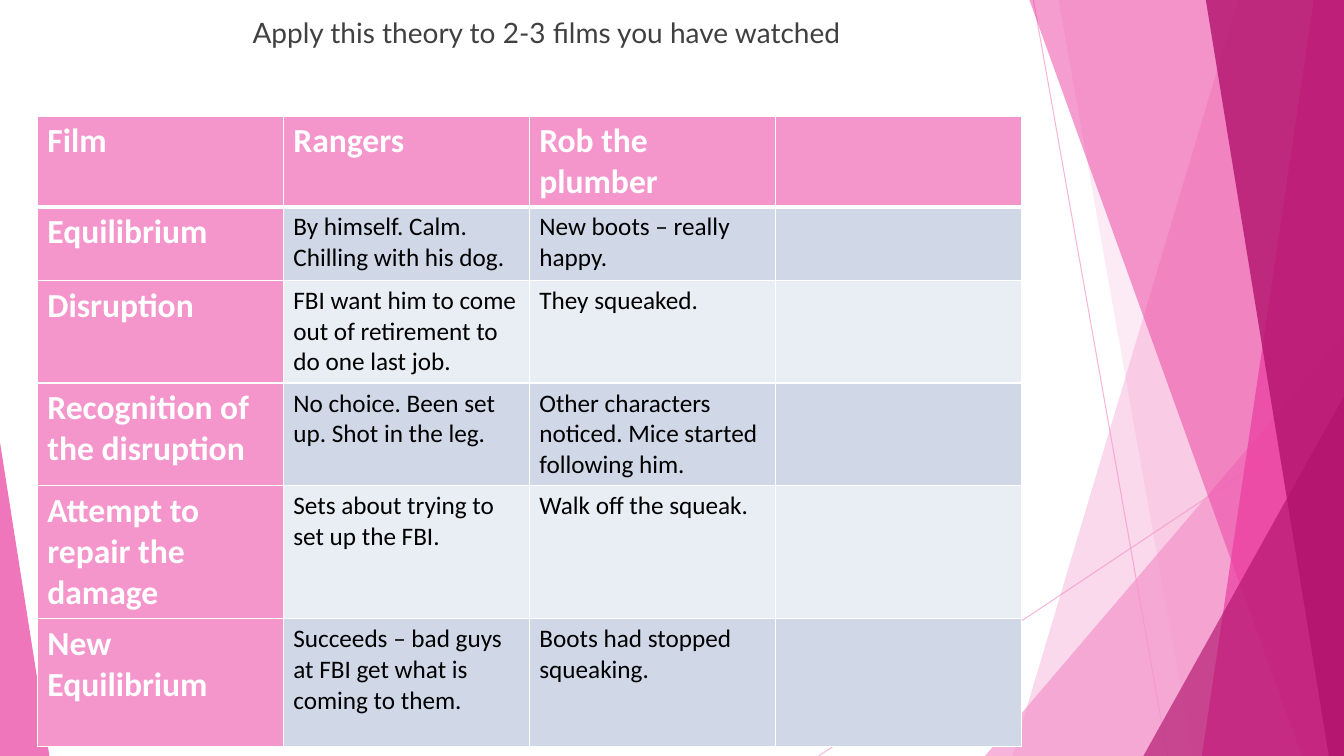
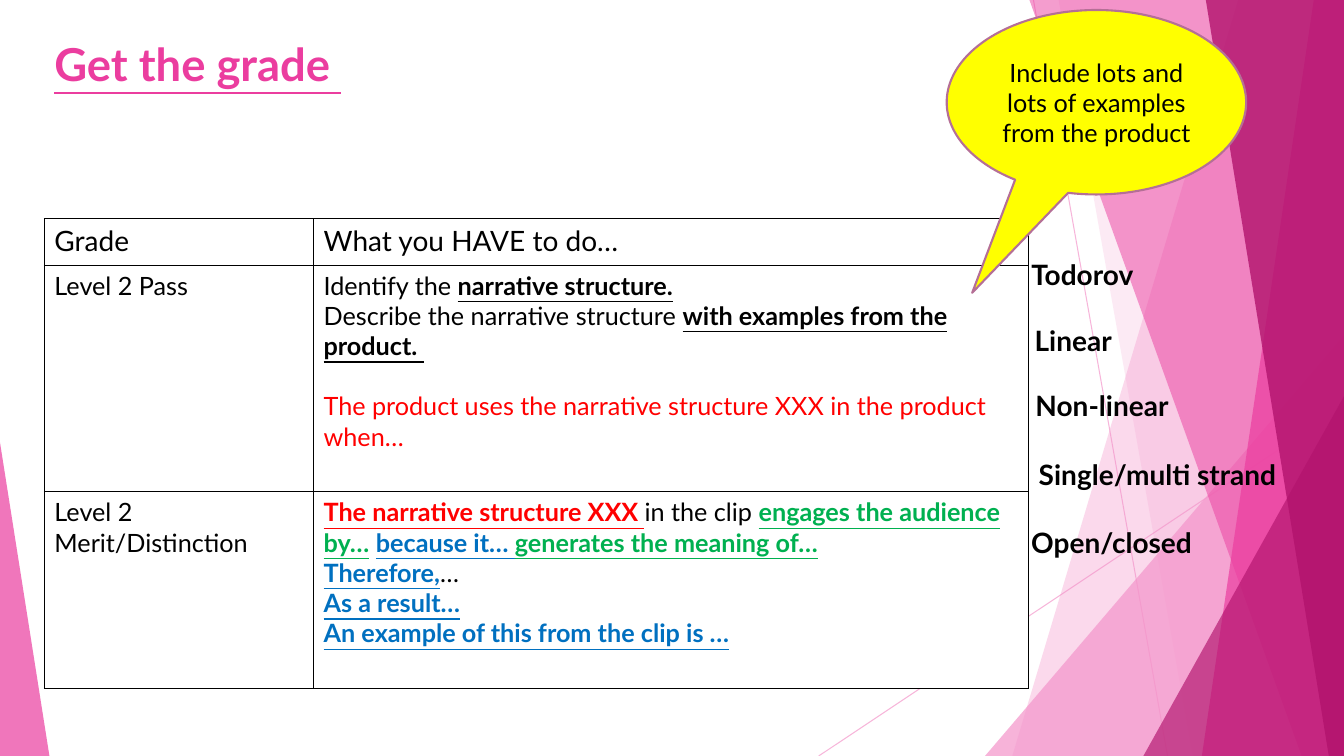
from lxml import etree
from pptx import Presentation
from pptx.dml.color import RGBColor
from pptx.enum.shapes import MSO_CONNECTOR, MSO_SHAPE
from pptx.enum.text import MSO_ANCHOR, PP_ALIGN
from pptx.oxml.ns import qn
from pptx.util import Pt

PX = 9144  # EMU in one px, 100 px to the inch
WIDTH, HEIGHT = 1333, 750

STRAIGHT = MSO_CONNECTOR.STRAIGHT
TRIANGLE = MSO_SHAPE.ISOSCELES_TRIANGLE
CALLOUT = MSO_SHAPE.OVAL_CALLOUT
LEFT, CENTER = PP_ALIGN.LEFT, PP_ALIGN.CENTER
TOP, MIDDLE = MSO_ANCHOR.TOP, MSO_ANCHOR.MIDDLE

WHITE = RGBColor(0xFF, 0xFF, 0xFF)
BLACK = RGBColor(0x00, 0x00, 0x00)
GREY = RGBColor(0x40, 0x40, 0x40)
LIGHT_PINK = RGBColor(0xF4, 0x96, 0xCB)
PINK = RGBColor(0xEB, 0x3D, 0x9F)
DARK_PINK = RGBColor(0xB2, 0x13, 0x6D)
BAND_DARK = RGBColor(0xD0, 0xD8, 0xE8)
BAND_LIGHT = RGBColor(0xE9, 0xED, 0xF4)
YELLOW = RGBColor(0xFF, 0xFF, 0x00)
MAUVE = RGBColor(0xB5, 0x6F, 0x96)
RED = RGBColor(0xFF, 0x00, 0x00)
GREEN = RGBColor(0x00, 0xB0, 0x50)
BLUE = RGBColor(0x00, 0x70, 0xC0)

BODY_FONT, TABLE_FONT = "Lato", "Calibri"

# Ribbons from back to front: corner points or triangle box, colour, opacity
RIBBONS = [
    ([(1228, 0), (WIDTH, 0), (WIDTH, HEIGHT), (1004, HEIGHT)], LIGHT_PINK, 36),
    ([(1050, 0), (WIDTH, 0), (WIDTH, HEIGHT), (1183, HEIGHT)], LIGHT_PINK, 20),
    ((977, 333, 356, 417, 1), LIGHT_PINK, 72),
    ([(1021, 0), (WIDTH, 0), (WIDTH, HEIGHT), (1291, HEIGHT)], PINK, 50),
    ([(1303, 0), (WIDTH, 0), (WIDTH, HEIGHT), (1192, HEIGHT)], PINK, 70),
    ([(1196, 0), (WIDTH, 0), (WIDTH, HEIGHT), (1318, HEIGHT)], DARK_PINK, 80),
    ((1134, 393, 199, 357, 1), DARK_PINK, 66),
    ((0, 439, 49, 311, 0), PINK, 70),
]

FILMS = [
    ["Film", "Rangers", "Rob the plumber", ""],
    ["Equilibrium", "By himself. Calm. Chilling with his dog.",
     "New boots – really happy.", ""],
    ["Disruption", "FBI want him to come out of retirement to do one last job.",
     "They squeaked.", ""],
    ["Recognition of the disruption", "No choice. Been set up. Shot in the leg.",
     "Other characters noticed. Mice started following him.", ""],
    ["Attempt to repair the damage", "Sets about trying to set up the FBI.",
     "Walk off the squeak.", ""],
    ["New Equilibrium", "Succeeds – bad guys at FBI get what is coming to them.",
     "Boots had stopped squeaking.", ""],
]


def strong(color):
    return {"color": color, "bold": True, "underline": True}


PASS_TASKS = [
    [("Identify the ", {}), ("narrative structure.", strong(BLACK))],
    [("Describe the narrative structure ", {}),
     ("with examples from the product. ", strong(BLACK))],
    [("The product uses the narrative structure XXX in the product when…",
      {"color": RED})],
]
MERIT_TASKS = [
    [("The narrative structure XXX ", strong(RED)), ("in the clip ", {}),
     ("engages the audience by…", strong(GREEN)), (" ", {}),
     ("because it… ", strong(BLUE)),
     ("generates the meaning of…", strong(GREEN))],
    [("Therefore,", strong(BLUE)), ("…", {})],
    [("As a result…", strong(BLUE))],
    [("An example of this from the clip is …", strong(BLUE))],
]

# Structure labels: text, box
STRUCTURES = [
    ("Todorov", (1011, 251, 125, 44)),
    ("Linear", (1013, 316, 103, 44)),
    ("Non-linear", (1014, 381, 158, 44)),
    ("Single/multi strand", (1014, 449, 268, 44)),
    ("Open/closed", (1011, 516, 183, 44)),
]


def emu(*lengths):
    return [length * PX for length in lengths]


def write(text_frame, text, align=LEFT, line_spacing=None, gaps=None, **style):
    """Write a string, or paragraphs made of (text, format) runs."""
    paragraphs = [[(text, {})]] if isinstance(text, str) else text
    for index, runs in enumerate(paragraphs):
        paragraph = text_frame.paragraphs[0] if index == 0 else text_frame.add_paragraph()
        paragraph.alignment = align
        paragraph.line_spacing = line_spacing
        if gaps and index in gaps:
            paragraph.space_before = Pt(gaps[index])
        for content, changes in runs:
            look = {"font": BODY_FONT, "size": 18, "color": BLACK, "bold": False,
                    "underline": False, **style, **changes}
            run = paragraph.add_run()
            run.text = content
            run.font.name = look["font"]
            run.font.size = Pt(look["size"])
            run.font.color.rgb = look["color"]
            run.font.bold = look["bold"]
            run.font.underline = look["underline"]


def add_text(slide, box, text, wrap=True, **style):
    text_frame = slide.shapes.add_textbox(*emu(*box)).text_frame
    text_frame.word_wrap = wrap
    text_frame.vertical_anchor = TOP
    write(text_frame, text, **style)


def set_opacity(shape, percent):
    for color in shape._element.iter(qn("a:srgbClr")):
        etree.SubElement(color, qn("a:alpha"), val=str(percent * 1000))


def add_ribbon(slide, outline, color, opacity):
    if isinstance(outline, list):
        points = [emu(*point) for point in outline]
        builder = slide.shapes.build_freeform(*points[0])
        builder.add_line_segments(points[1:], close=True)
        shape = builder.convert_to_shape()
    else:
        *box, apex = outline
        shape = slide.shapes.add_shape(TRIANGLE, *emu(*box))
        shape.adjustments[0] = apex
    shape.shadow.inherit = False
    shape.fill.solid()
    shape.fill.fore_color.rgb = color
    shape.line.fill.background()
    set_opacity(shape, opacity)


def add_background(slide):
    # Thin crossing lines
    for ends in ((1025, 0, 1158, HEIGHT), (WIDTH, 403, 812, HEIGHT)):
        line = slide.shapes.add_connector(STRAIGHT, *emu(*ends))
        line.line.color.rgb = LIGHT_PINK
        line.line.width = Pt(0.75)
        etree.SubElement(line._element.spPr, qn("a:effectLst"))
        set_opacity(line, 70)
    # Translucent ribbons
    for ribbon in RIBBONS:
        add_ribbon(slide, *ribbon)


def add_grid(slide, left, top, columns, rows):
    box = emu(left, top, sum(columns), sum(rows))
    table = slide.shapes.add_table(len(rows), len(columns), *box).table
    table.first_row = table.horz_banding = False
    for column, width in zip(table.columns, emu(*columns)):
        column.width = width
    for row, height in zip(table.rows, emu(*rows)):
        row.height = height
    return table


def style_cell(cell, fill, border, top=1, bottom=1):
    cell.fill.solid()
    cell.fill.fore_color.rgb = fill
    properties = cell._tc.get_or_add_tcPr()
    edges = (("a:lnL", 1), ("a:lnR", 1), ("a:lnT", top), ("a:lnB", bottom))
    for index, (tag, width) in enumerate(edges):
        edge = etree.Element(qn(tag), w=str(Pt(width)))
        solid = etree.SubElement(edge, qn("a:solidFill"))
        etree.SubElement(solid, qn("a:srgbClr"), val=str(border))
        properties.insert(index, edge)


def add_film_table(slide, left, top):
    table = add_grid(slide, left, top, [244] * 4, [73, 73, 102, 102, 132, 127])
    for row, texts in enumerate(FILMS):
        for column, text in enumerate(texts):
            cell = table.cell(row, column)
            heading = row == 0 or column == 0
            band = BAND_DARK if row % 2 else BAND_LIGHT
            style_cell(cell, LIGHT_PINK if heading else band, WHITE,
                       top=3 if row == 1 else 1, bottom=3 if row == 0 else 1)
            if text:
                write(cell.text_frame, text, font=TABLE_FONT, bold=heading,
                      size=24 if heading else 18, color=WHITE if heading else BLACK)


def add_grade_table(slide, left, top):
    table = add_grid(slide, left, top, [267, 709], [46, 225, 195])
    grades = [
        ("Grade", "What you HAVE to do…"),
        ("Level 2 Pass", PASS_TASKS),
        ("Level 2 Merit/Distinction", MERIT_TASKS),
    ]
    for row, texts in enumerate(grades):
        for column, text in enumerate(texts):
            cell = table.cell(row, column)
            style_cell(cell, WHITE, BLACK)
            write(cell.text_frame, text, size=18 if row else 20,
                  gaps={2: 21.6} if text is PASS_TASKS else None)


def add_callout(slide, box, text):
    shape = slide.shapes.add_shape(CALLOUT, *emu(*box))
    shape.adjustments[0], shape.adjustments[1] = -0.415, 1.033
    shape.shadow.inherit = False
    shape.fill.solid()
    shape.fill.fore_color.rgb = YELLOW
    shape.line.color.rgb = MAUVE
    shape.line.width = Pt(1.5)
    shape.text_frame.word_wrap = True
    shape.text_frame.vertical_anchor = MIDDLE
    write(shape.text_frame, text, align=CENTER)


def build_film_slide(slide):
    add_background(slide)
    add_text(slide, (0, 14, 1084, 117), "Apply this theory to 2-3 films you have watched",
             size=20, color=GREY, align=CENTER, line_spacing=0.9)
    add_film_table(slide, 37, 115)


def build_grade_slide(slide):
    add_background(slide)
    add_text(slide, (44, 31, 940, 71), "Get the grade ", size=32.4, **strong(PINK))
    add_grade_table(slide, 44, 217)
    add_callout(slide, (939, 10, 297, 183),
                "Include lots and lots of examples from the product")
    for text, box in STRUCTURES:
        add_text(slide, box, text, wrap=False, size=20, bold=True, align=CENTER)


def main():
    presentation = Presentation()
    presentation.slide_width, presentation.slide_height = emu(WIDTH, HEIGHT)
    blank = presentation.slide_layouts[6]
    for build in (build_film_slide, build_grade_slide):
        build(presentation.slides.add_slide(blank))
    presentation.save("out.pptx")


if __name__ == "__main__":
    main()
